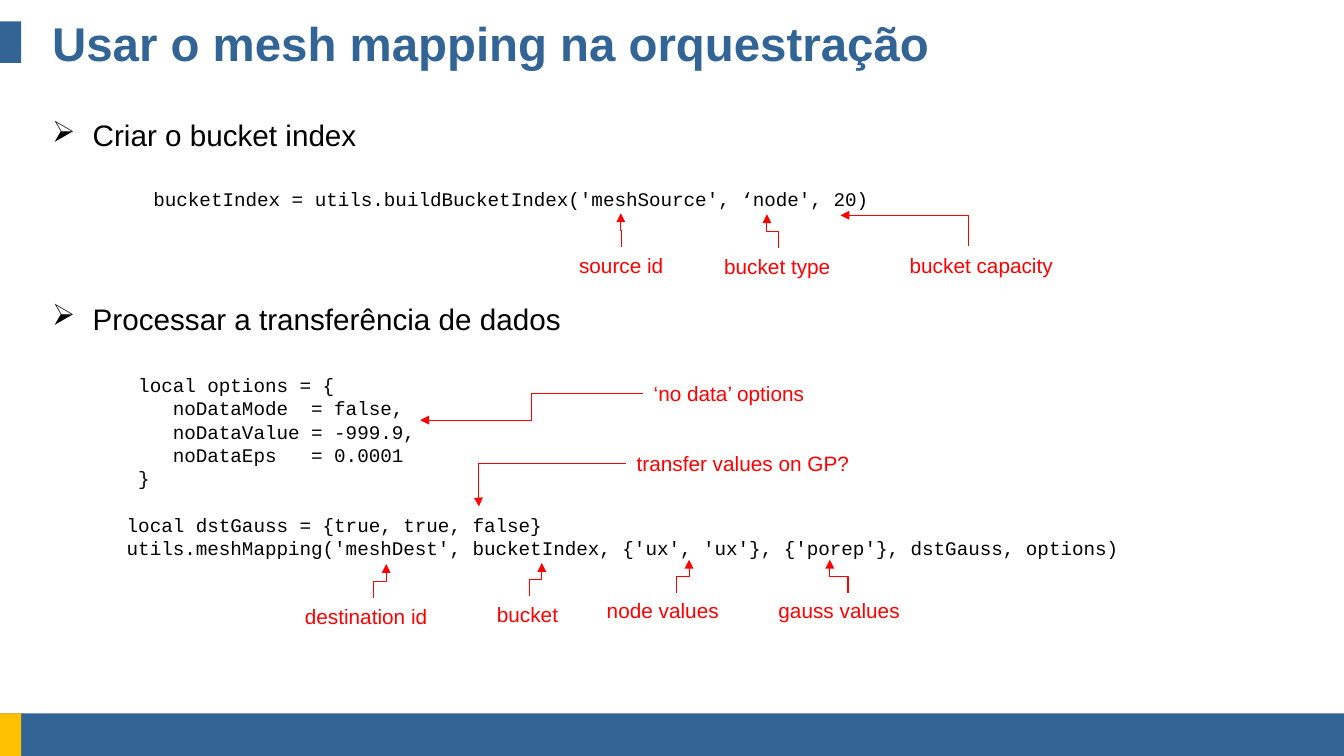
from pptx import Presentation, util as u
from pptx.dml import color
from pptx.enum import shapes, text
from pptx.oxml import ns
from lxml import etree

BLUE, AMBER, RED, BLACK = "326496", "FFC000", "FF0000", "000000"


def rgb(value):
    return color.RGBColor.from_string(value)


def add_text(frame, lines, font_format, ink, bullet=None, line_spacing=None, gaps={}):
    frame.word_wrap = True
    for index, line in enumerate(lines):
        para = frame.paragraphs[0] if index == 0 else frame.add_paragraph()
        if bullet:
            props = para._p.get_or_add_pPr()
            props.set("marL", str(u.Inches(0.38)))
            props.set("indent", str(-u.Inches(0.38)))
            etree.SubElement(props, ns.qn("a:buChar")).set("char", bullet)
        para.space_before = u.Pt(gaps.get(index, 0))
        if line_spacing:
            para.line_spacing = u.Pt(line_spacing)
        span = para.add_run()
        span.text = line
        for name, value in font_format.items():
            setattr(span.font, name, value)
        span.font.color.rgb = rgb(ink)


deck = Presentation()
deck.slide_width, deck.slide_height = u.Inches(12.6), u.Inches(7.09)
page = deck.slides.add_slide(deck.slide_layouts[6])

bars = [(0, 6.69, 12.6, 0.4, BLUE), (0, 6.69, 0.2, 0.4, AMBER), (0, 0.2, 0.2, 0.39, BLUE)]
for *place, fill in bars:
    bar = page.shapes.add_shape(shapes.MSO_SHAPE.RECTANGLE, *map(u.Inches, place))
    bar.shadow.inherit = False
    bar.fill.solid()
    bar.fill.fore_color.rgb = rgb(fill)
    bar.line.fill.background()

title_font = {"name": "Arial", "size": u.Pt(32), "bold": True}
topic_font = {"name": "Arial", "size": u.Pt(20)}
code_font = {"name": "Courier New", "size": u.Pt(13)}
label_font = {"name": "Arial", "size": u.Pt(14)}

title = page.shapes.add_textbox(*map(u.Inches, (0.39, 0.2, 11.81, 0.39))).text_frame
title.vertical_anchor = text.MSO_ANCHOR.MIDDLE
add_text(title, ["Usar o mesh mapping na orquestração"], title_font, BLUE)

topics = page.shapes.add_textbox(*map(u.Inches, (0.39, 1.05, 11.81, 4.89))).text_frame
add_text(topics, ["Criar o bucket index", "Processar a transferência de dados"],
         topic_font, BLACK, bullet="➢", gaps={1: 100})

mapping_code = [
    " local options = {",
    "    noDataMode  = false,",
    "    noDataValue = -999.9,",
    "    noDataEps   = 0.0001",
    " }",
    "local dstGauss = {true, true, false}",
    "utils.meshMapping('meshDest', bucketIndex, {'ux', 'ux'}, {'porep'}, dstGauss, options)",
]
index_code = ["bucketIndex = utils.buildBucketIndex('meshSource', ‘node', 20)"]
listings = [((1.09, 3.45, 11.4, 1.85), mapping_code, {5: 15.7}),
            ((1.34, 1.71, 11.2, 0.32), index_code, {})]
for place, lines, gaps in listings:
    listing = page.shapes.add_textbox(*map(u.Inches, place)).text_frame
    add_text(listing, lines, code_font, BLACK, line_spacing=15.7, gaps=gaps)

labels = [
    ("source id", 5.33, 2.32, 1.05),
    ("bucket type", 6.69, 2.33, 1.25),
    ("‘no data’ options", 6.03, 3.52, 1.67),
    ("bucket capacity", 8.43, 2.32, 1.7),
    ("destination id", 2.76, 5.61, 1.5),
    ("node values", 5.59, 5.56, 1.5),
    ("gauss values", 7.2, 5.56, 1.5),
    ("transfer values on GP?", 5.87, 4.18, 3.03),
    ("bucket", 4.56, 5.59, 0.85),
]
for wording, left, top, width in labels:
    label = page.shapes.add_textbox(*map(u.Inches, (left, top, width, 0.34))).text_frame
    add_text(label, [wording], label_font, RED)

arrows = [
    (5.83, 2.32, 5.82, 2, "up", None),
    (7.3, 2.33, 7.19, 2.01, "up", None),
    (9.08, 2.31, 7.88, 2.02, "corner", None),
    (3.5, 5.61, 3.62, 5.29, "up", None),
    (6.34, 5.56, 6.46, 5.25, "up", None),
    (7.95, 5.56, 7.78, 5.25, "up", None),
    (4.96, 5.59, 5.08, 5.28, "up", None),
    (6.03, 3.69, 3.94, 3.94, "side", None),
    (5.87, 4.35, 4.49, 4.75, "side", 100300),
]
for x1, y1, x2, y2, route, bend in arrows:
    ends = (x1, y1, x2, y2)
    if route != "side":
        mid_x, mid_y = (x1 + x2) / 2, (y1 + y2) / 2
        half_rise, half_shift = (y1 - y2) / 2, (x2 - x1) / 2
        ends = (mid_x - half_rise, mid_y - half_shift, mid_x + half_rise, mid_y + half_shift)
    arrow = page.shapes.add_connector(shapes.MSO_CONNECTOR.ELBOW, *map(u.Inches, ends))
    arrow.line.color.rgb = rgb(RED)
    arrow.line.width = u.Pt(0.75)
    props = arrow._element.spPr
    geometry = props.find(ns.qn("a:prstGeom"))
    if route != "side":
        props.find(ns.qn("a:xfrm")).set("rot", "16200000")
    if route == "corner":
        geometry.set("prst", "bentConnector2")
    if bend:
        guide = etree.SubElement(geometry.find(ns.qn("a:avLst")), ns.qn("a:gd"))
        guide.set("name", "adj1")
        guide.set("fmla", f"val {bend}")
    etree.SubElement(arrow.line._get_or_add_ln(), ns.qn("a:tailEnd")).set("type", "triangle")
    etree.SubElement(props, ns.qn("a:effectLst"))

deck.save("out.pptx")
